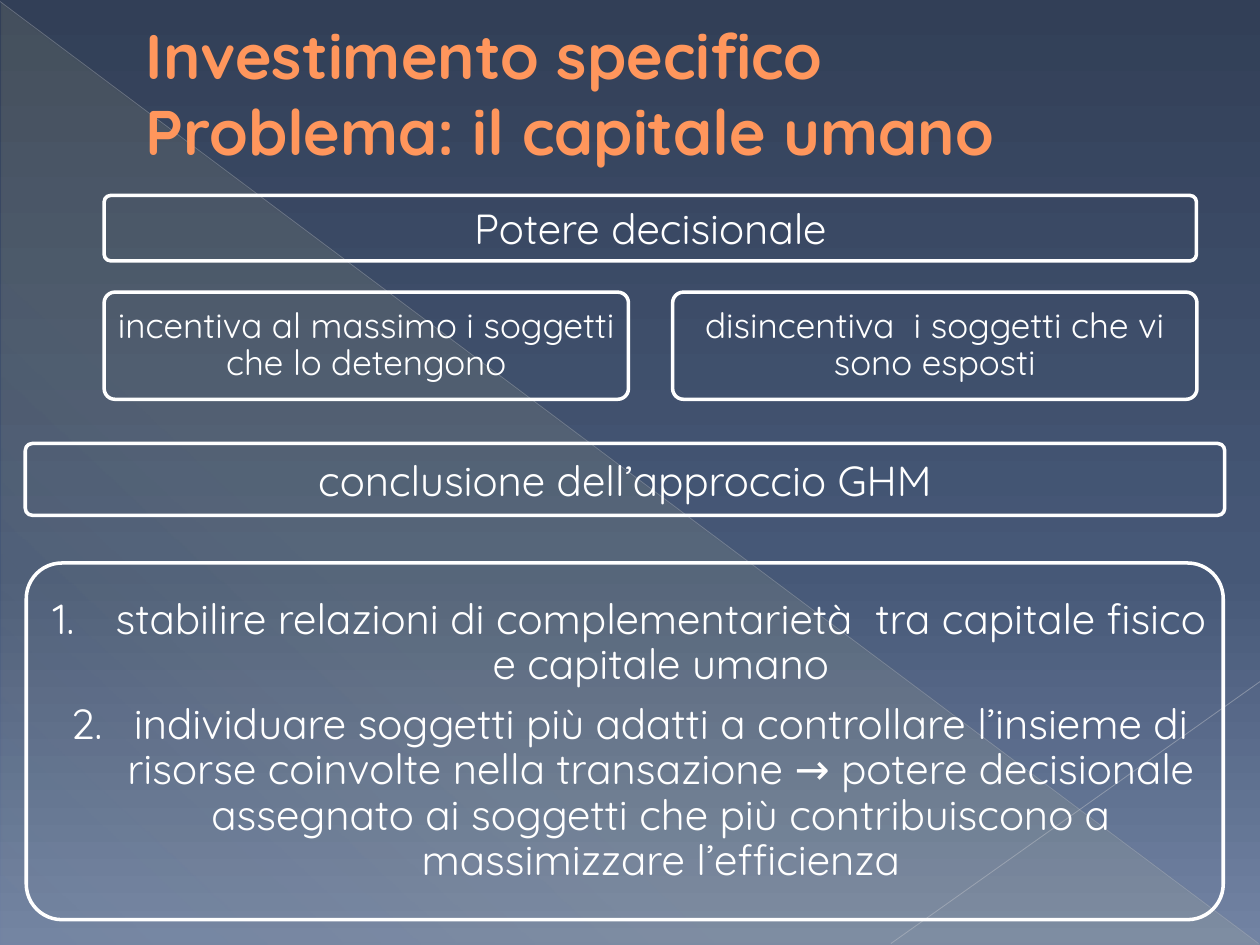
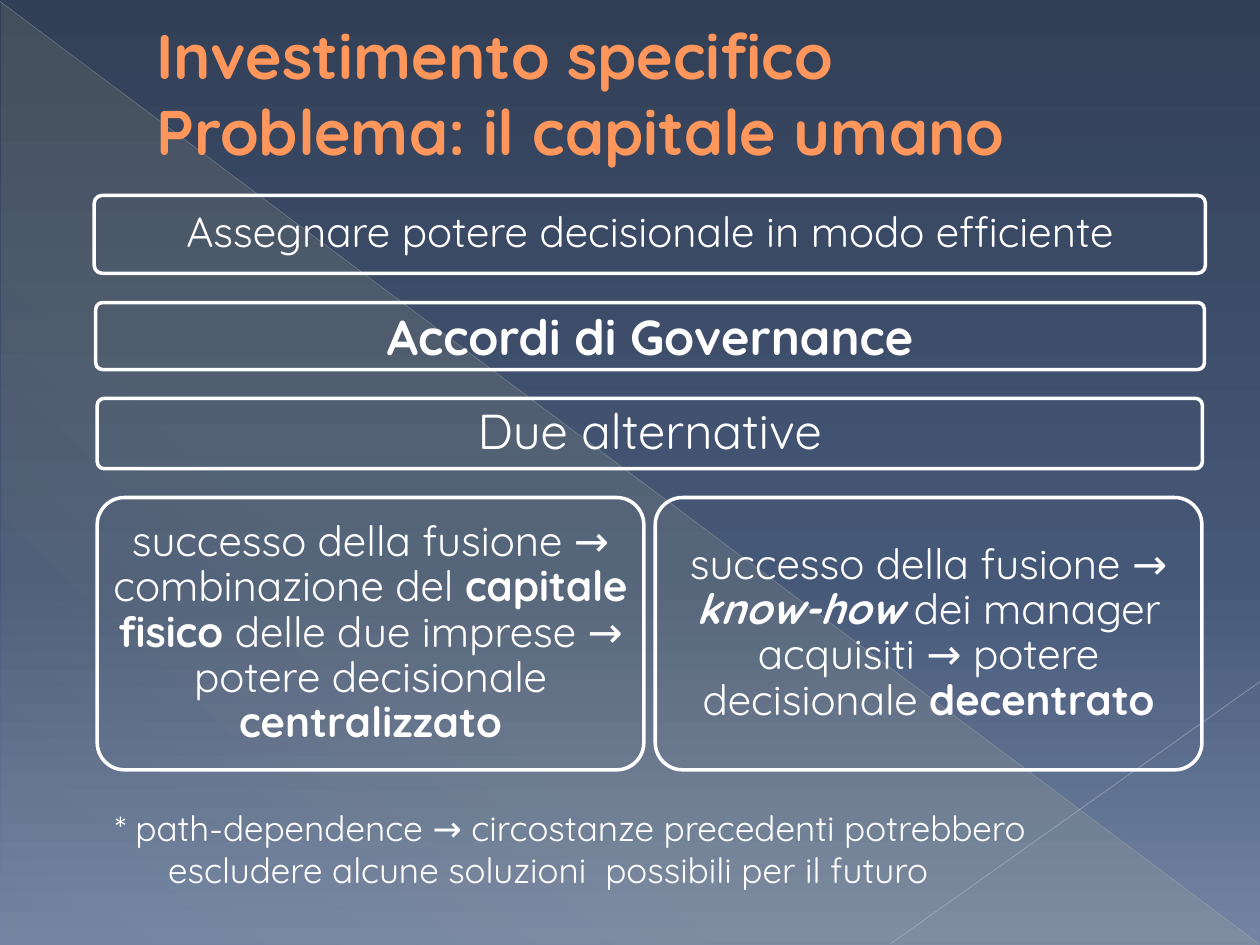
"""Build two slides on specific investment and human capital."""
from lxml import etree
from pptx import Presentation
from pptx.dml.color import RGBColor
from pptx.enum.shapes import MSO_CONNECTOR, MSO_SHAPE
from pptx.enum.text import MSO_ANCHOR, PP_ALIGN
from pptx.oxml.ns import qn
from pptx.util import Cm, Pt

STRAIGHT = MSO_CONNECTOR.STRAIGHT
TRIANGLE, ROUNDED = MSO_SHAPE.RIGHT_TRIANGLE, MSO_SHAPE.ROUNDED_RECTANGLE
TOP, MIDDLE = MSO_ANCHOR.TOP, MSO_ANCHOR.MIDDLE
LEFT, CENTER = PP_ALIGN.LEFT, PP_ALIGN.CENTER

FONT = "Quicksand"
WHITE, ORANGE = "FFFFFF", "FF965C"
BACKGROUND = [(0, "323F57", 100), (60, "465877", 100), (100, "7283A3", 100)]
GLOW = [(0, "FFF39D", 10), (70, "FFF39D", 8), (100, "FFF39D", 1)]
DIAGONALS = [
    ((0, 0.03), (25.37, 19.02), "BABDC4", 0.39, 35),
    ((25.4, 13.74), (17.96, 19.02), "C1C4CA", 0.47, 45),
]
TITLE = "Investimento specifico\vProblema: il capitale umano"
TITLE_RIGHT = 24.13
CORNER = 0.1
CORNER_INSET = CORNER * 0.29

SLIDES = [
    {
        "title_left": 2.69,
        "boxes": [
            ((2.1, 3.94, 22.02, 1.32), 24, 1.0, [[("Potere decisionale", "")]]),
            ((2.1, 5.89, 10.57, 2.16), 20, 0.9,
             [[("incentiva al massimo i soggetti che lo detengono", "")]]),
            ((13.56, 5.89, 10.57, 2.16), 20, 0.9,
             [[("disincentiva  i soggetti che vi sono esposti", "")]]),
            ((0.51, 8.94, 24.18, 1.45), 24, 1.0,
             [[("conclusione dell’approccio GHM", "")]]),
            ((0.53, 11.35, 24.13, 7.19), 24, 0.9, [
                [("stabilire relazioni di complementarietà  tra capitale fisico "
                  "e capitale umano", "")],
                [("individuare soggetti più adatti a controllare l’insieme di risorse "
                  "coinvolte nella transazione → potere decisionale assegnato ai "
                  "soggetti che più contribuiscono a massimizzare l’efficienza", "")],
            ]),
        ],
        "note": "",
    },
    {
        "title_left": 2.9,
        "boxes": [
            ((1.9, 3.94, 22.4, 1.57), 24, 0.9,
             [[("Assegnare potere decisionale in modo efficiente", "")]]),
            ((1.93, 6.1, 22.35, 1.35), 28, 1.0, [[("Accordi di Governance", "b")]]),
            ((1.96, 8.03, 22.28, 1.42), 28, 0.9, [[("Due alternative", "")]]),
            ((1.96, 10.03, 11.02, 5.49), 24, 0.9, [[
                ("successo della fusione → combinazione del ", ""),
                ("capitale fisico ", "b"),
                ("delle due imprese → potere decisionale ", ""),
                ("centralizzato", "b"),
            ]]),
            ((13.21, 10.03, 11.02, 5.49), 24, 0.9, [[
                ("successo della fusione → ", ""),
                ("know-how", "bi"),
                (" dei manager acquisiti → potere decisionale ", ""),
                ("decentrato", "b"),
            ]]),
        ],
        "note": "* path-dependence → circostanze precedenti potrebbero escludere "
                "alcune soluzioni  possibili per il futuro",
    },
]


def set_gradient(element, stops, angle):
    """Replace the solid fill inside an element by a linear gradient."""
    solid = element.find(".//" + qn("a:solidFill"))
    gradient = etree.Element(qn("a:gradFill"), rotWithShape="1")
    stop_list = etree.SubElement(gradient, qn("a:gsLst"))
    for position, color, opacity in stops:
        stop = etree.SubElement(stop_list, qn("a:gs"), pos=str(position * 1000))
        tint = etree.SubElement(stop, qn("a:srgbClr"), val=color)
        etree.SubElement(tint, qn("a:alpha"), val=str(opacity * 1000))
    etree.SubElement(gradient, qn("a:lin"), ang=str(angle * 60000), scaled="0")
    solid.getparent().replace(solid, gradient)


def write_text(shape, paragraphs, size, color, alignment, anchor, spacing=1.0):
    """Fill a shape with paragraphs made of (text, style) runs."""
    frame = shape.text_frame
    frame.word_wrap = True
    frame.vertical_anchor = anchor
    for index, pieces in enumerate(paragraphs):
        paragraph = frame.add_paragraph() if index else frame.paragraphs[0]
        paragraph.alignment = alignment
        paragraph.line_spacing = spacing
        if spacing < 1:
            paragraph.space_after = Pt(round(size * 0.35, 1))
        for text, style in pieces:
            first = len(paragraph.runs)
            if "\v" in text:
                paragraph.text = text
            else:
                paragraph.add_run().text = text
            for run in paragraph.runs[first:]:
                run.font.name = FONT
                run.font.size = Pt(size)
                run.font.bold = "b" in style
                run.font.italic = "i" in style
                run.font.color.rgb = RGBColor.from_string(color)


presentation = Presentation()
presentation.slide_width, presentation.slide_height = Cm(25.4), Cm(19.05)

for content in SLIDES:
    slide = presentation.slides.add_slide(presentation.slide_layouts[6])
    slide.background.fill.solid()
    slide.background.fill.fore_color.rgb = RGBColor.from_string(WHITE)
    set_gradient(slide.element, BACKGROUND, 90)

    triangle = slide.shapes.add_shape(TRIANGLE, Cm(0.03), Cm(0.05), Cm(25.37), Cm(19))
    triangle.shadow.inherit = False
    triangle.line.fill.background()
    triangle.fill.solid()
    triangle.fill.fore_color.rgb = RGBColor.from_string(WHITE)
    set_gradient(triangle.element, GLOW, 133)

    for start, end, color, width, opacity in DIAGONALS:
        diagonal = slide.shapes.add_connector(STRAIGHT, *map(Cm, start + end))
        diagonal.line.width = Pt(width)
        diagonal.line.color.rgb = RGBColor.from_string(color)
        properties = diagonal.element.spPr
        tint = properties.find(".//" + qn("a:srgbClr"))
        etree.SubElement(tint, qn("a:alpha"), val=str(opacity * 1000))
        etree.SubElement(properties, qn("a:effectLst"))

    left = content["title_left"]
    title = slide.shapes.add_textbox(Cm(left), 0, Cm(TITLE_RIGHT - left), Cm(3.73))
    write_text(title, [[(TITLE, "b")]], 36, ORANGE, LEFT, MIDDLE)

    for place, size, spacing, paragraphs in content["boxes"]:
        box = slide.shapes.add_shape(ROUNDED, *map(Cm, place))
        box.adjustments[0] = CORNER
        box.shadow.inherit = False
        box.fill.background()
        box.line.width = Pt(2)
        box.line.color.rgb = RGBColor.from_string(WHITE)
        frame = box.text_frame
        margin = Cm(size / 94 - CORNER_INSET * place[3])
        frame.margin_left = frame.margin_right = margin
        frame.margin_top = frame.margin_bottom = margin
        write_text(box, paragraphs, size, WHITE, CENTER, MIDDLE, spacing)
        if len(paragraphs) > 1:
            for paragraph in frame.paragraphs:
                properties = paragraph._p.get_or_add_pPr()
                properties.set("marL", str(Cm(1.45)))
                properties.set("indent", str(Cm(-1.27)))
                etree.SubElement(properties, qn("a:buAutoNum"), type="arabicPeriod")

    if content["note"]:
        note = slide.shapes.add_textbox(Cm(1.9), Cm(16.13), Cm(22.02), Cm(2.39))
        write_text(note, [[(content["note"], "")]], 20, WHITE, LEFT, TOP)
        paragraph = note.text_frame.paragraphs[0]
        paragraph.space_before = Pt(4)
        properties = paragraph._p.get_or_add_pPr()
        properties.set("marL", str(Cm(1.24)))
        properties.set("indent", str(Cm(-1.07)))

presentation.save("out.pptx")
